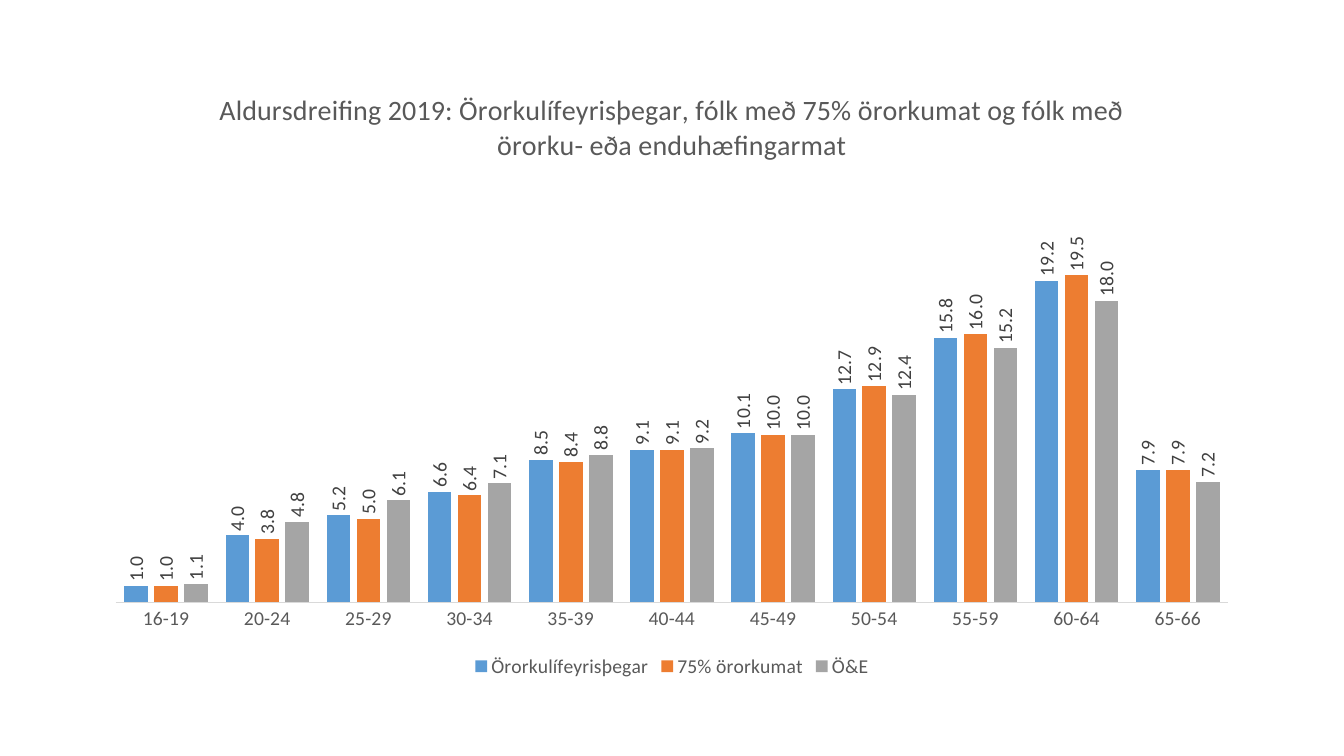
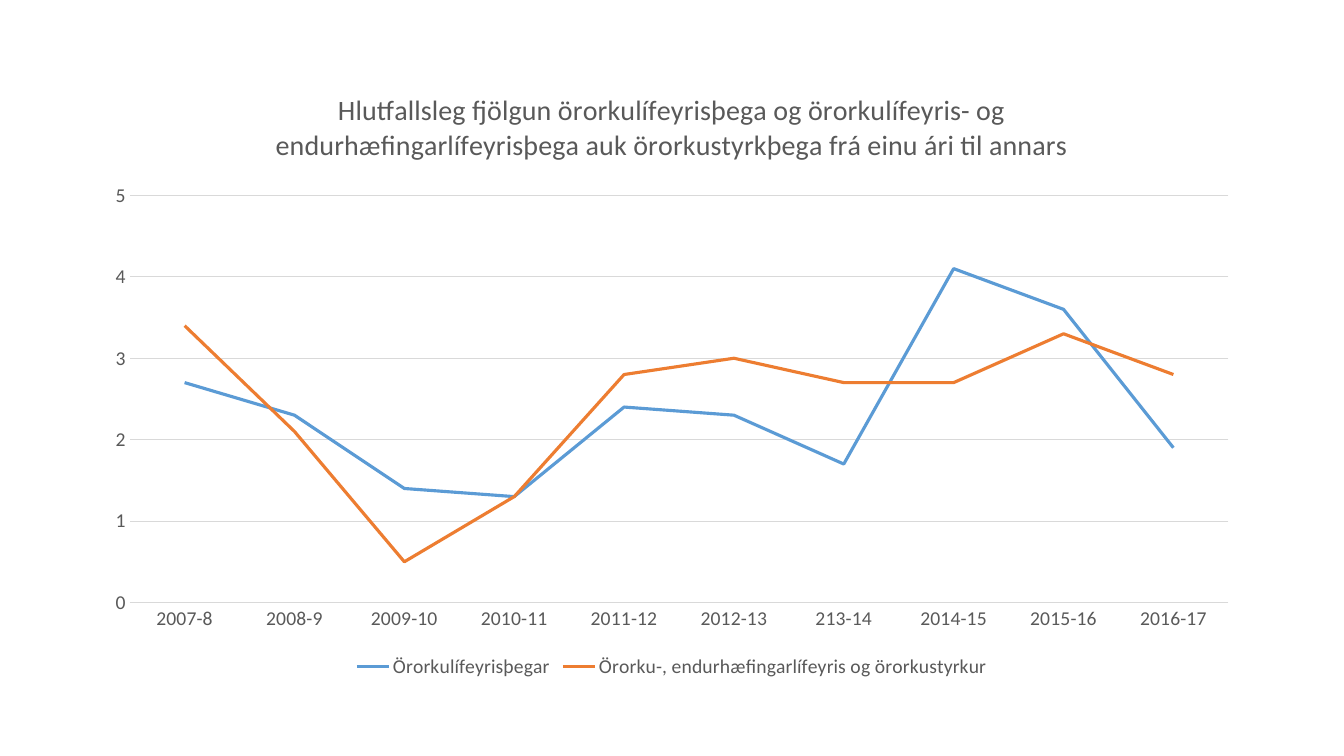
import pptx
import pptx.chart.data
import pptx.dml.color
import pptx.enum.chart
import pptx.util

COLORS = {
    "text": "595959",
    "label": "404040",
    "rule": "D9D9D9",
    "blue": "5B9BD5",
    "orange": "ED7D31",
    "gray": "A5A5A5",
}
FONT = "Calibri"
PX = 9525
SLIDE_SIZE = (1280, 720)
CHART_BOX = (88, 64, 1104, 586)
TEXT = {"name": FONT, "size": pptx.util.Pt(14), "bold": False}
TITLE = {**TEXT, "size": pptx.util.Pt(20)}

CHARTS = [
    {
        "kind": "COLUMN_CLUSTERED",
        "title": "Aldursdreifing 2019: Örorkulífeyrisþegar, fólk með 75% örorkumat "
                 "og fólk með örorku- eða enduhæfingarmat",
        "categories": ["16-19", "20-24", "25-29", "30-34", "35-39", "40-44",
                       "45-49", "50-54", "55-59", "60-64", "65-66"],
        "series": [
            ("Örorkulífeyrisþegar", "blue",
             [1, 4, 5.2, 6.6, 8.5, 9.1, 10.1, 12.7, 15.8, 19.2, 7.9]),
            ("75% örorkumat", "orange",
             [1, 3.8, 5, 6.4, 8.4, 9.1, 10, 12.9, 16, 19.5, 7.9]),
            ("Ö&E", "gray",
             [1.1, 4.8, 6.1, 7.1, 8.8, 9.2, 10, 12.4, 15.2, 18, 7.2]),
        ],
        "value_axis": {"visible": False, "has_major_gridlines": False,
                       "minimum_scale": 0, "maximum_scale": 25},
    },
    {
        "kind": "LINE",
        "title": "Hlutfallsleg fjölgun örorkulífeyrisþega og örorkulífeyris- og "
                 "endurhæfingarlífeyrisþega auk örorkustyrkþega frá einu ári til annars",
        "categories": ["2007-8", "2008-9", "2009-10", "2010-11", "2011-12",
                       "2012-13", "213-14", "2014-15", "2015-16", "2016-17"],
        "series": [
            ("Örorkulífeyrisþegar", "blue",
             [2.7, 2.3, 1.4, 1.3, 2.4, 2.3, 1.7, 4.1, 3.6, 1.9]),
            ("Örorku-, endurhæfingarlífeyris og örorkustyrkur", "orange",
             [3.4, 2.1, 0.5, 1.3, 2.8, 3, 2.7, 2.7, 3.3, 2.8]),
        ],
        "value_axis": {"visible": True, "has_major_gridlines": True,
                       "minimum_scale": 0, "maximum_scale": 5, "major_unit": 1},
    },
]


def set_all(target, values):
    for name, value in values.items():
        setattr(target, name, value)


def rgb(color):
    return pptx.dml.color.RGBColor.from_string(COLORS[color])


def style_font(font, values=TEXT, color="text"):
    set_all(font, values)
    font.color.rgb = rgb(color)


def style_line(line, color, points):
    line.color.rgb = rgb(color)
    line.width = pptx.util.Pt(points)


def style_title(chart, text):
    chart.has_title = True
    chart.chart_title.include_in_layout = False
    para = chart.chart_title.text_frame.paragraphs[0]
    span = para.add_run()
    span.text = text
    style_font(span.font, TITLE)


def style_legend(chart):
    chart.has_legend = True
    set_all(chart.legend, {
        "position": pptx.enum.chart.XL_LEGEND_POSITION.BOTTOM,
        "include_in_layout": False,
    })
    style_font(chart.legend.font)


def style_axes(chart, value_format):
    for axis in (chart.category_axis, chart.value_axis):
        set_all(axis, {
            "major_tick_mark": pptx.enum.chart.XL_TICK_MARK.NONE,
            "minor_tick_mark": pptx.enum.chart.XL_TICK_MARK.NONE,
        })
        style_font(axis.tick_labels.font)
    style_line(chart.category_axis.format.line, "rule", 0.75)
    axis = chart.value_axis
    set_all(axis, value_format)
    set_all(axis.tick_labels, {"number_format": "0", "number_format_is_linked": False})
    axis.format.line.fill.background()
    if axis.has_major_gridlines:
        style_line(axis.major_gridlines.format.line, "rule", 0.75)


def style_column(series, color):
    series.format.fill.solid()
    series.format.fill.fore_color.rgb = rgb(color)
    series.invert_if_negative = False
    labels = series.data_labels
    set_all(labels, {
        "show_value": True,
        "number_format": "0.0",
        "number_format_is_linked": False,
        "position": pptx.enum.chart.XL_LABEL_POSITION.OUTSIDE_END,
    })
    style_font(labels.font, color="label")
    body = labels._element.find(".//" + pptx.oxml.ns.qn("a:bodyPr"))
    body.set("rot", "-5400000")
    body.set("vert", "horz")


def style_curve(series, color):
    series.smooth = False
    series.marker.style = pptx.enum.chart.XL_MARKER_STYLE.NONE
    style_line(series.format.line, color, 2.25)


def add_chart_slide(deck, content):
    data = pptx.chart.data.CategoryChartData()
    data.categories = content["categories"]
    for name, _, values in content["series"]:
        data.add_series(name, values)
    page = deck.slides.add_slide(deck.slide_layouts[6])
    kind = getattr(pptx.enum.chart.XL_CHART_TYPE, content["kind"])
    box = [length * PX for length in CHART_BOX]
    chart = page.shapes.add_chart(kind, *box, data).chart
    style_font(chart.font)
    style_title(chart, content["title"])
    style_legend(chart)
    style_axes(chart, content["value_axis"])
    plot = chart.plots[0]
    plot.vary_by_categories = False
    columns = content["kind"] == "COLUMN_CLUSTERED"
    if columns:
        set_all(plot, {"gap_width": 75, "overlap": -27})
    style_series = style_column if columns else style_curve
    for series, (_, color, _) in zip(plot.series, content["series"]):
        style_series(series, color)


def main():
    deck = pptx.Presentation()
    deck.slide_width, deck.slide_height = (length * PX for length in SLIDE_SIZE)
    for content in CHARTS:
        add_chart_slide(deck, content)
    deck.save("out.pptx")


if __name__ == "__main__":
    main()
